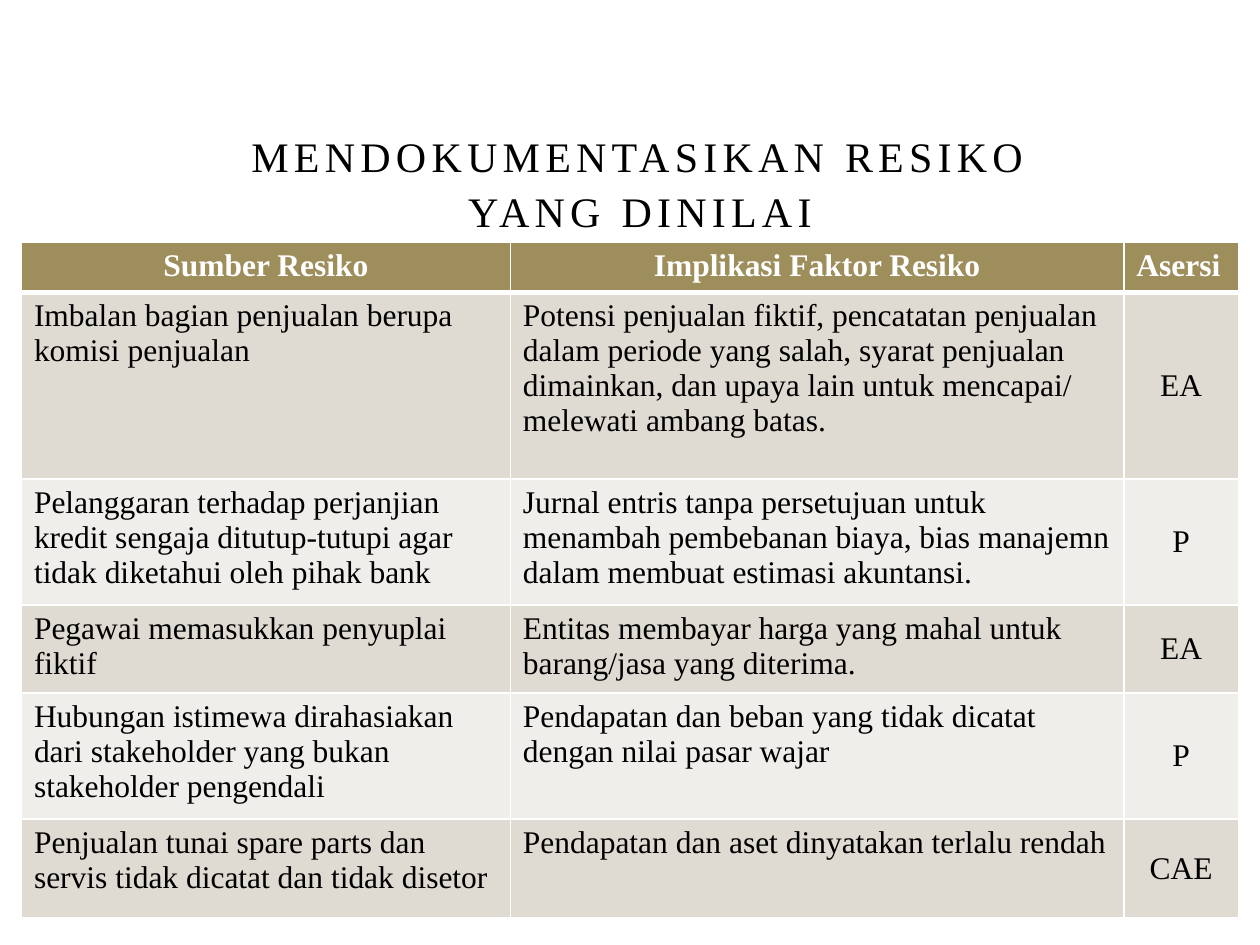
import pptx
import pptx.util
import pptx.dml.color
import pptx.enum.text
import pptx.oxml
import pptx.oxml.ns
import lxml.etree

Inches = pptx.util.Inches
Pt = pptx.util.Pt
RGBColor = pptx.dml.color.RGBColor
Align = pptx.enum.text.PP_ALIGN
Anchor = pptx.enum.text.MSO_ANCHOR
qn = pptx.oxml.ns.qn

BLACK = RGBColor(0x00, 0x00, 0x00)
WHITE = RGBColor(0xFF, 0xFF, 0xFF)
OLIVE = RGBColor(0x9E, 0x8E, 0x5C)
SAND = RGBColor(0xDF, 0xDB, 0xD2)
PALE = RGBColor(0xF0, 0xEE, 0xEA)

WIDTHS = [3.88, 4.87, 0.91]
HEIGHTS = [0.37, 1.48, 0.94, 0.66, 0.94, 0.78]
ROWS = [
    ("Sumber Resiko", "Implikasi Faktor Resiko", "Asersi"),
    ("Imbalan bagian penjualan berupa komisi penjualan",
     "Potensi penjualan fiktif, pencatatan penjualan dalam periode yang salah, "
     "syarat penjualan dimainkan, dan upaya lain untuk mencapai/ melewati ambang batas.",
     "EA"),
    ("Pelanggaran terhadap perjanjian kredit sengaja ditutup-tutupi agar "
     "tidak diketahui oleh pihak bank",
     "Jurnal entris tanpa persetujuan untuk menambah pembebanan biaya, "
     "bias manajemn dalam membuat estimasi akuntansi.",
     "P"),
    ("Pegawai memasukkan penyuplai fiktif",
     "Entitas membayar harga yang mahal untuk barang/jasa yang diterima.",
     "EA"),
    ("Hubungan istimewa dirahasiakan dari stakeholder yang bukan stakeholder pengendali",
     "Pendapatan dan beban yang tidak dicatat dengan nilai pasar wajar",
     "P"),
    ("Penjualan tunai spare parts dan servis tidak dicatat dan tidak disetor",
     "Pendapatan dan aset dinyatakan terlalu rendah",
     "CAE"),
]


class Deck:
    face = "Times New Roman"

    def __init__(self, wide, high):
        self.show = pptx.Presentation()
        self.show.slide_width = Inches(wide)
        self.show.slide_height = Inches(high)
        self.slide = self.show.slides.add_slide(self.show.slide_layouts[6])

    def style(self, para, size, color, align, bold=False):
        para.alignment = align
        font = para.font
        font.name = self.face
        font.size = Pt(size)
        font.bold = bold
        font.color.rgb = color

    def title(self, text, x, y, w, h):
        box = self.slide.shapes.add_textbox(Inches(x), Inches(y), Inches(w), Inches(h))
        frame = box.text_frame
        frame.word_wrap = True
        frame.vertical_anchor = Anchor.BOTTOM
        para = frame.paragraphs[0]
        run = para.add_run()
        run.text = text
        para.line_spacing = 1.08
        self.style(para, 24, BLACK, Align.CENTER)
        run.font._element.set("spc", "300")

    def border(self, cell, side, width):
        props = cell._tc.get_or_add_tcPr()
        line = lxml.etree.SubElement(props, qn("a:" + side), w=str(Pt(width)))
        fill = lxml.etree.SubElement(line, qn("a:solidFill"))
        lxml.etree.SubElement(fill, qn("a:srgbClr"), val=str(WHITE))

    def cell(self, cell, text, row, col):
        head = row == 0
        last = col == len(WIDTHS) - 1
        cell.text = text
        center = head != last
        self.style(cell.text_frame.paragraphs[0], 18, WHITE if head else BLACK,
                   Align.CENTER if center else Align.LEFT, head)
        cell.vertical_anchor = Anchor.MIDDLE if last and not head else Anchor.TOP
        for side in ("lnL", "lnR", "lnT", "lnB"):
            thick = (row, side) in ((0, "lnB"), (1, "lnT"))
            self.border(cell, side, 3 if thick else 1)
        cell.fill.solid()
        cell.fill.fore_color.rgb = OLIVE if head else SAND if row % 2 else PALE

    def table(self, rows, x, y):
        grid = self.slide.shapes.add_table(
            len(rows), len(WIDTHS), Inches(x), Inches(y),
            Inches(sum(WIDTHS)), Inches(sum(HEIGHTS))).table
        for col, width in zip(grid.columns, WIDTHS):
            col.width = Inches(width)
        for line, height in zip(grid.rows, HEIGHTS):
            line.height = Inches(height)
        for r, row in enumerate(rows):
            for c, text in enumerate(row):
                self.cell(grid.cell(r, c), text, r, c)


def main():
    deck = Deck(10, 7.5)
    deck.title("MENDOKUMENTASIKAN RESIKO YANG DINILAI", 1.58, 1.17, 7, 0.75)
    deck.table(ROWS, 0.17, 1.92)
    deck.show.save("out.pptx")


if __name__ == "__main__":
    main()
